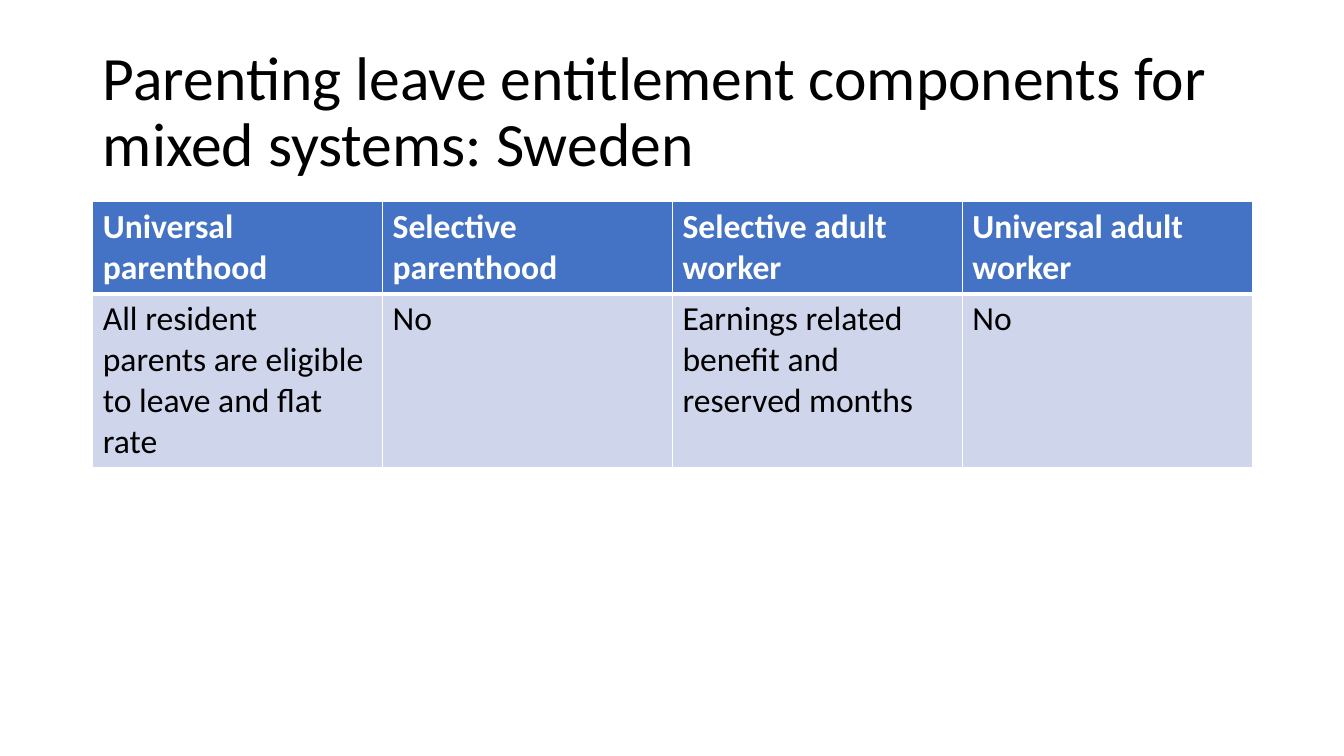
import dataclasses

import pptx
import pptx.dml.color
import pptx.enum.text
import pptx.oxml
import pptx.oxml.ns
import pptx.util

Inches = pptx.util.Inches


@dataclasses.dataclass(frozen=True)
class Theme:
    font: str = "Calibri"
    title_size: int = 44
    table_size: int = 24
    ink: str = "000000"
    paper: str = "FFFFFF"
    header_fill: str = "4472C4"
    body_fill: str = "CFD5EA"
    thin: int = 1
    thick: int = 3


class SlideBuilder:
    def __init__(self, slide, theme):
        self.slide = slide
        self.theme = theme

    def add_lines(self, frame, lines, size, color, bold=False, spacing=None):
        for index, line in enumerate(lines):
            paragraph = frame.add_paragraph() if index else frame.paragraphs[0]
            paragraph.alignment = pptx.enum.text.PP_ALIGN.LEFT
            if spacing:
                paragraph.line_spacing = spacing
            run = paragraph.add_run()
            run.text = line
            run.font.name = self.theme.font
            run.font.size = pptx.util.Pt(size)
            run.font.bold = bold
            run.font.color.rgb = pptx.dml.color.RGBColor.from_string(color)

    def title(self, text, left, top, width, height):
        heading = self.slide.shapes.title
        heading.left, heading.top = Inches(left), Inches(top)
        heading.width, heading.height = Inches(width), Inches(height)
        frame = heading.text_frame
        frame.word_wrap = True
        frame.auto_size = pptx.enum.text.MSO_AUTO_SIZE.NONE
        frame.vertical_anchor = pptx.enum.text.MSO_ANCHOR.MIDDLE
        self.add_lines(frame, [text], self.theme.title_size, self.theme.ink, spacing=0.9)

    def borders(self, cell, top, bottom):
        properties = cell._tc.get_or_add_tcPr()
        thin = self.theme.thin
        for side, points in (("L", thin), ("R", thin), ("T", top), ("B", bottom)):
            properties.append(pptx.oxml.parse_xml(
                f'<a:ln{side} {pptx.oxml.ns.nsdecls("a")} w="{pptx.util.Pt(points)}">'
                f'<a:solidFill><a:srgbClr val="{self.theme.paper}"/></a:solidFill>'
                f'</a:ln{side}>'))

    def table(self, rows, left, top, width, row_heights):
        theme = self.theme
        grid = self.slide.shapes.add_table(
            len(rows), len(rows[0]), Inches(left), Inches(top),
            Inches(width), Inches(sum(row_heights))).table
        grid.horz_banding = False
        for row_index, (row, height) in enumerate(zip(rows, row_heights)):
            grid.rows[row_index].height = Inches(height)
            is_header = row_index == 0
            fill = theme.header_fill if is_header else theme.body_fill
            ink = theme.paper if is_header else theme.ink
            edges = (theme.thin, theme.thick) if is_header else (theme.thick, theme.thin)
            for column_index, lines in enumerate(row):
                cell = grid.cell(row_index, column_index)
                self.borders(cell, *edges)
                cell.fill.solid()
                cell.fill.fore_color.rgb = pptx.dml.color.RGBColor.from_string(fill)
                self.add_lines(cell.text_frame, lines, theme.table_size, ink, is_header)


def main():
    deck = pptx.Presentation()
    deck.slide_width, deck.slide_height = Inches(13.33), Inches(7.5)
    builder = SlideBuilder(deck.slides.add_slide(deck.slide_layouts[5]), Theme())
    builder.title("Parenting leave entitlement components for mixed systems: Sweden",
                  0.92, 0.4, 11.5, 1.45)
    entitlements = [
        [["Universal parenthood"], ["Selective parenthood"],
         ["Selective adult worker"], ["Universal adult worker"]],
        [["All resident", "parents are eligible to leave and flat rate"], ["No"],
         ["Earnings related", "benefit and", "reserved months"], ["No"]],
    ]
    builder.table(entitlements, 0.92, 2, 11.5, [0.9, 1.7])
    deck.save("out.pptx")


if __name__ == "__main__":
    main()
